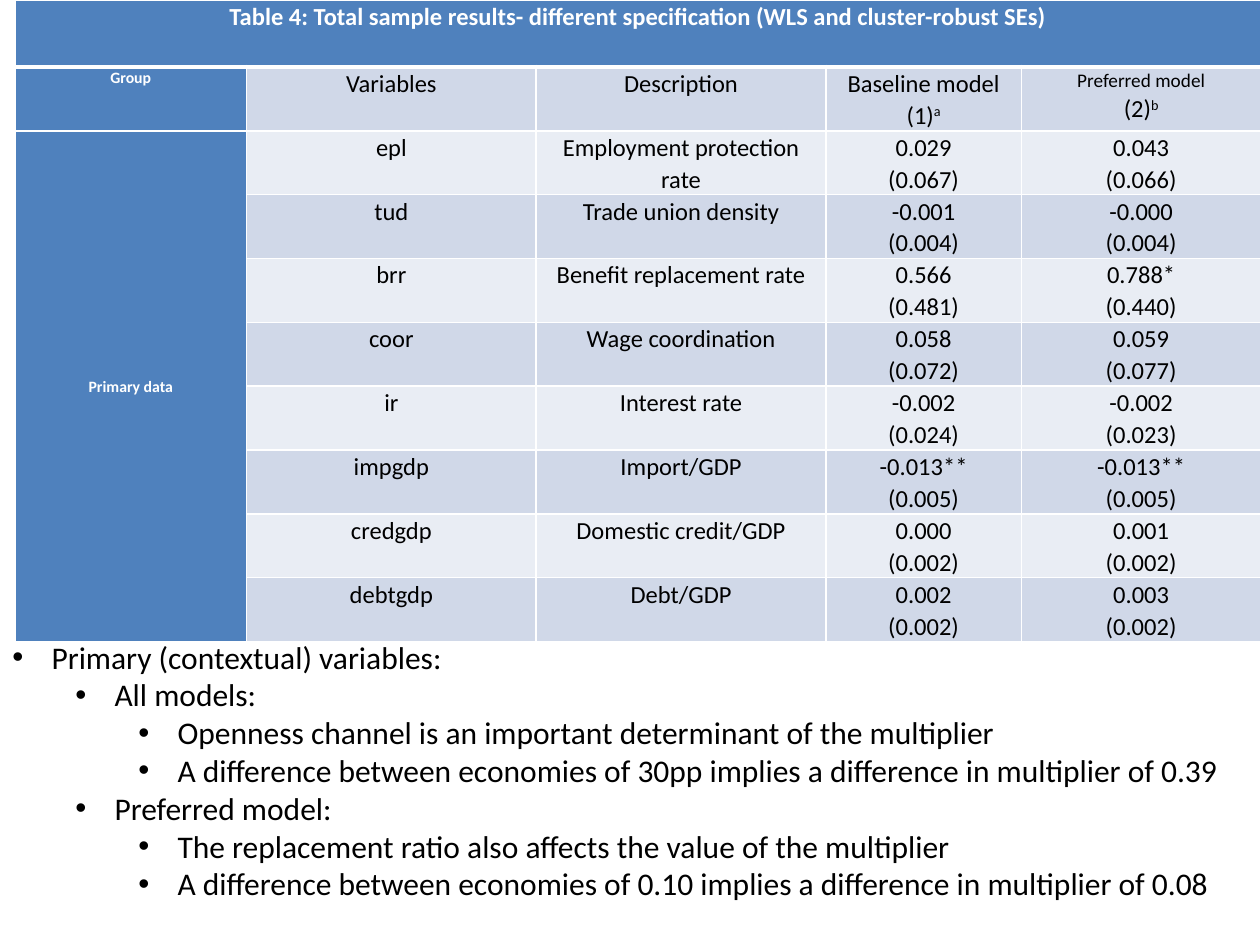
from lxml import etree
from pptx import Presentation
from pptx.dml.color import RGBColor
from pptx.enum import text
from pptx.oxml import ns
from pptx.util import Cm, Pt

FONT = "Calibri"
WHITE = RGBColor(0xFF, 0xFF, 0xFF)
BLACK = RGBColor(0x00, 0x00, 0x00)
HEADER_BLUE = RGBColor(0x4F, 0x81, 0xBD)
DARK_BAND = RGBColor(0xD0, 0xD8, 0xE8)
LIGHT_BAND = RGBColor(0xE9, 0xED, 0xF4)

COLUMN_WIDTHS = (4.67, 5.84, 5.84, 3.94, 4.83)
ROW_HEIGHTS = (1.35, 1.17) + (1.19,) * 8

CAPTION = "Table 4: Total sample results- different specification (WLS and cluster-robust SEs)"

# Variable, description, then coefficient and standard error for each model
RESULTS = [
    ("epl", "Employment protection rate", ("0.029", "(0.067)"), ("0.043", "(0.066)")),
    ("tud", "Trade union density", ("-0.001", "(0.004)"), ("-0.000", "(0.004)")),
    ("brr", "Benefit replacement rate", ("0.566", "(0.481)"), ("0.788*", "(0.440)")),
    ("coor", "Wage coordination", ("0.058", "(0.072)"), ("0.059", "(0.077)")),
    ("ir", "Interest rate", ("-0.002", "(0.024)"), ("-0.002", "(0.023)")),
    ("impgdp", "Import/GDP", ("-0.013**", "(0.005)"), ("-0.013**", "(0.005)")),
    ("credgdp", "Domestic credit/GDP", ("0.000", "(0.002)"), ("0.001", "(0.002)")),
    ("debtgdp", "Debt/GDP", ("0.002", "(0.002)"), ("0.003", "(0.002)")),
]

# Indent level and wording
FINDINGS = [
    (0, "Primary (contextual) variables:"),
    (1, "All models:"),
    (2, "Openness channel is an important determinant of the multiplier"),
    (2, "A difference between economies of 30pp implies a difference in multiplier of 0.39"),
    (1, "Preferred model:"),
    (2, "The replacement ratio also affects the value of the multiplier"),
    (2, "A difference between economies of 0.10 implies a difference in multiplier of 0.08"),
]


def add_run(paragraph, words, size, color=BLACK, bold=False, superscript=False):
    run = paragraph.add_run()
    run.text = words
    run.font.name = FONT
    run.font.size = Pt(size)
    run.font.bold = bold
    run.font.color.rgb = color
    if superscript:
        run._r.get_or_add_rPr().set("baseline", "30000")


def set_borders(cell, top=1, bottom=1):
    properties = cell._tc.get_or_add_tcPr()
    for side, width in (("L", 1), ("R", 1), ("T", top), ("B", bottom)):
        line = etree.SubElement(properties, ns.qn(f"a:ln{side}"), w=str(Pt(width)))
        fill = etree.SubElement(line, ns.qn("a:solidFill"))
        etree.SubElement(fill, ns.qn("a:srgbClr"), val=str(WHITE))


def write_cell(cell, lines, size=14, color=BLACK, bold=False):
    """Write one paragraph per line; a line is (words, superscript mark, size) or plain words."""
    for index, line in enumerate(lines):
        words, mark, line_size = (line, "", size) if isinstance(line, str) else line
        frame = cell.text_frame
        paragraph = frame.add_paragraph() if index else frame.paragraphs[0]
        paragraph.alignment = text.PP_ALIGN.CENTER
        paragraph.line_spacing = 1.07
        add_run(paragraph, words, line_size, color, bold)
        if mark:
            add_run(paragraph, mark, line_size, color, bold, superscript=True)


def add_results_table(slide, left, top, width, height):
    table = slide.shapes.add_table(
        len(ROW_HEIGHTS), len(COLUMN_WIDTHS), left, top, width, height).table
    for column, column_width in zip(table.columns, COLUMN_WIDTHS):
        column.width = Cm(column_width)
    for row, row_height in zip(table.rows, ROW_HEIGHTS):
        row.height = Cm(row_height)

    # Borders, margins and banded fills
    for r, row in enumerate(table.rows):
        for c, cell in enumerate(row.cells):
            set_borders(cell, top=3 if r == 1 else 1, bottom=3 if r == 0 else 1)
            cell.margin_left = cell.margin_right = Cm(0.18)
            cell.margin_top = cell.margin_bottom = 0
            cell.fill.solid()
            band = DARK_BAND if r % 2 else LIGHT_BAND
            cell.fill.fore_color.rgb = HEADER_BLUE if r == 0 or c == 0 else band

    # Caption and group column
    table.cell(0, 0).merge(table.cell(0, 4))
    table.cell(2, 0).merge(table.cell(9, 0))
    write_cell(table.cell(0, 0), [CAPTION], 14, WHITE, True)
    write_cell(table.cell(1, 0), ["Group"], 9, WHITE, True)
    write_cell(table.cell(2, 0), ["Primary data"], 9, WHITE, True)
    table.cell(2, 0).vertical_anchor = text.MSO_ANCHOR.MIDDLE

    # Column headings
    headings = (
        ["Variables"],
        ["Description"],
        ["Baseline model", ("(1)", "a", 14)],
        [("Preferred model", "", 11), ("(2)", "b", 14)],
    )
    for c, heading in enumerate(headings, start=1):
        write_cell(table.cell(1, c), heading)

    # Estimates
    for r, (variable, description, baseline, preferred) in enumerate(RESULTS, start=2):
        for c, lines in enumerate(([variable], [description], baseline, preferred), start=1):
            write_cell(table.cell(r, c), lines)


def add_findings(slide, left, top, width, height):
    frame = slide.shapes.add_textbox(left, top, width, height).text_frame
    frame.word_wrap = True
    for index, (level, words) in enumerate(FINDINGS):
        paragraph = frame.add_paragraph() if index else frame.paragraphs[0]
        paragraph.level = level
        properties = paragraph._p.get_or_add_pPr()
        properties.set("marL", str(Cm(0.79 + 1.27 * level)))
        properties.set("indent", str(-Cm(0.79)))
        etree.SubElement(properties, ns.qn("a:buFont"), typeface="Arial")
        etree.SubElement(properties, ns.qn("a:buChar"), char="•")
        add_run(paragraph, words, 18)


def main():
    deck = Presentation()
    deck.slide_width, deck.slide_height = Cm(25.4), Cm(19.05)
    slide = deck.slides.add_slide(deck.slide_layouts[6])
    add_results_table(slide, Cm(0.3), Cm(0), Cm(25.1), Cm(12.78))
    add_findings(slide, Cm(0), Cm(12.73), Cm(25.4), Cm(6.32))
    deck.save("out.pptx")


if __name__ == "__main__":
    main()
